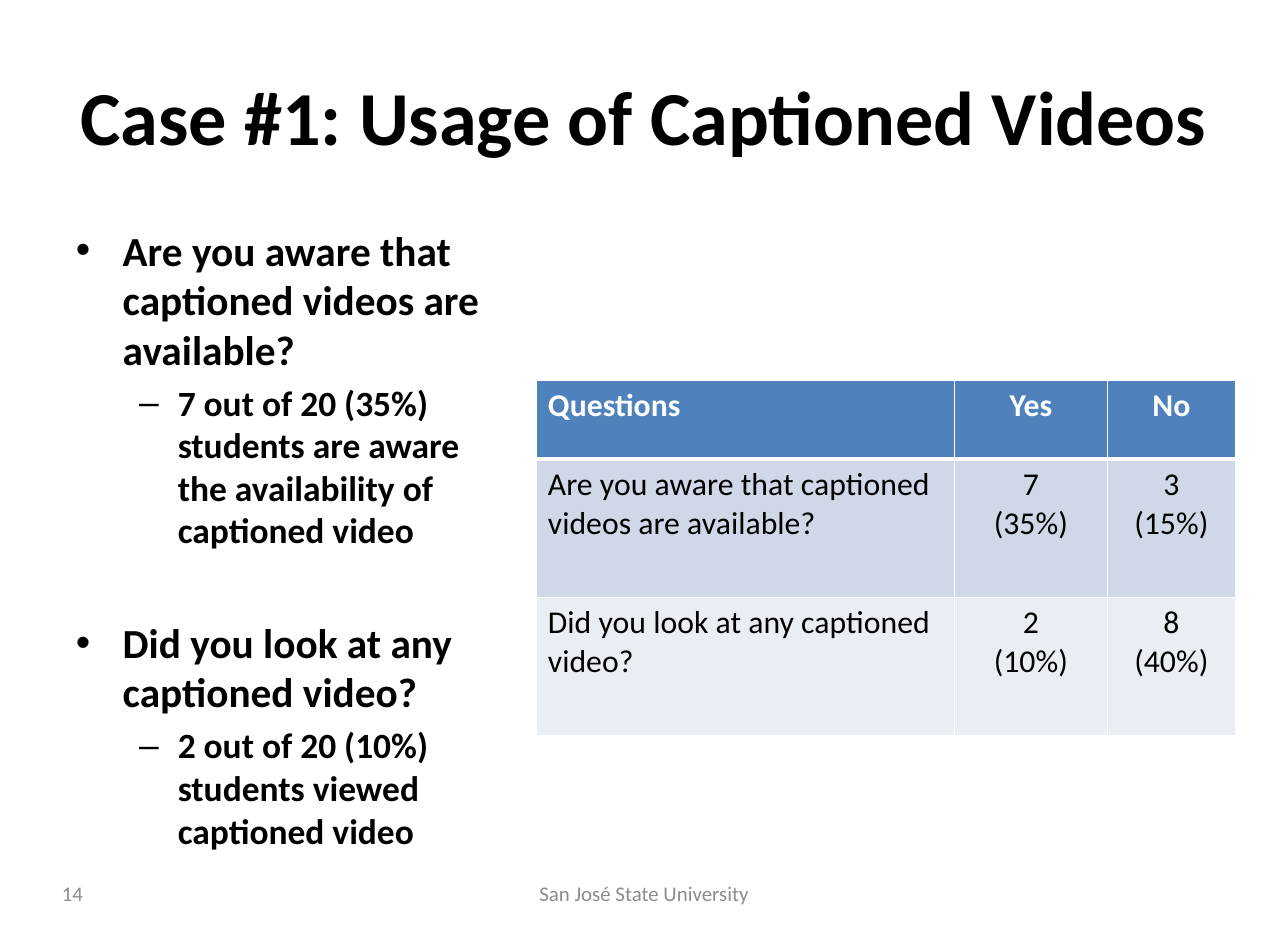
from lxml import etree
from pptx import Presentation
from pptx.dml.color import RGBColor
from pptx.enum.text import MSO_ANCHOR, PP_ALIGN
from pptx.oxml.ns import qn
from pptx.util import Inches, Pt

LEFT, CENTER = PP_ALIGN.LEFT, PP_ALIGN.CENTER
TOP, MIDDLE = MSO_ANCHOR.TOP, MSO_ANCHOR.MIDDLE
BLACK = RGBColor(0x00, 0x00, 0x00)
WHITE = RGBColor(0xFF, 0xFF, 0xFF)
GRAY = RGBColor(0x8C, 0x8C, 0x8C)
BLUE = RGBColor(0x4F, 0x81, 0xBD)
BANDS = [RGBColor(0xD0, 0xD8, 0xE8), RGBColor(0xE9, 0xED, 0xF4)]

# Text, left, top, width, height, alignment, font
HEAD = {"size": Pt(46.9), "bold": True}
FOOT = {"size": Pt(12.8), "color": GRAY}
LABELS = [
    ("Case #1: Usage of Captioned Videos", 0.55, 0.32, 9.9, 1.33, CENTER, HEAD),
    ("San José State University", 3.76, 7.41, 3.48, 0.43, CENTER, FOOT),
    ("14", 0.43, 7.41, 2.57, 0.43, LEFT, FOOT),
]

# Level, space before in points, text
POINTS = [
    (0, 0, "Are you aware that captioned videos are available?"),
    (1, 4.5, "7 out of 20 (35%) students are aware the availability of captioned video"),
    (0, 40.5, "Did you look at any captioned video?"),
    (1, 4.5, "2 out of 20 (10%) students viewed captioned video"),
]
# Bullet, text indent, hanging indent, size
LEVELS = [("•", 0.4, 0.4, 25.4), ("–", 0.87, 0.33, 21.8)]

ROWS = [
    ("Questions", "Yes", "No"),
    ("Are you aware that captioned videos are available?", "7\n(35%)", "3\n(15%)"),
    ("Did you look at any captioned video?", "2\n(10%)", "8\n(40%)"),
]
WIDTHS = [3.57, 1.31, 1.09]
HEIGHTS = [0.67, 1.18, 1.18]


def style(para, color=BLACK, **values):
    para.font.name = "Calibri"
    para.font.color.rgb = color
    for name, value in values.items():
        setattr(para.font, name, value)


def add_box(slide, left, top, width, height, anchor):
    box = slide.shapes.add_textbox(*map(Inches, (left, top, width, height)))
    frame = box.text_frame
    frame.word_wrap = True
    frame.vertical_anchor = anchor
    return frame


def add_points(slide):
    frame = add_box(slide, 0.55, 1.87, 3.66, 5.28, TOP)
    frame.text = "\n".join(text for *_, text in POINTS)
    for para, (level, space, _) in zip(frame.paragraphs, POINTS):
        mark, indent, hang, size = LEVELS[level]
        para.level = level
        para.space_before = Pt(space)
        props = para._p.get_or_add_pPr()
        props.set("marL", str(Inches(indent)))
        props.set("indent", str(-Inches(hang)))
        etree.SubElement(props, qn("a:buFont")).set("typeface", "Arial")
        etree.SubElement(props, qn("a:buChar")).set("char", mark)
        style(para, size=Pt(size), bold=True)


def add_edges(cell, bottom):
    """Draw white cell borders; they must come before the fill."""
    props = cell._tc.get_or_add_tcPr()
    for side, width in (("L", 1), ("R", 1), ("T", 1), ("B", bottom)):
        line = etree.SubElement(props, qn("a:ln" + side), w=str(Pt(width)))
        fill = etree.SubElement(line, qn("a:solidFill"))
        etree.SubElement(fill, qn("a:srgbClr")).set("val", str(WHITE))


def add_grid(slide):
    frame = slide.shapes.add_table(
        len(ROWS), len(WIDTHS), Inches(4.58), Inches(3.25),
        Inches(sum(WIDTHS)), Inches(sum(HEIGHTS)))
    table = frame.table
    for col, width in zip(table.columns, WIDTHS):
        col.width = Inches(width)
    for r, texts in enumerate(ROWS):
        table.rows[r].height = Inches(HEIGHTS[r])
        first = r == 0
        for c, text in enumerate(texts):
            cell = table.cell(r, c)
            cell.text = text
            add_edges(cell, 3 if first else 1)
            cell.fill.solid()
            cell.fill.fore_color.rgb = BLUE if first else BANDS[r - 1]
            for para in cell.text_frame.paragraphs:
                para.alignment = CENTER if c else LEFT
                style(para, WHITE if first else BLACK, size=Pt(19.5), bold=first)


def main():
    deck = Presentation()
    deck.slide_width, deck.slide_height = Inches(11), Inches(8)
    slide = deck.slides.add_slide(deck.slide_layouts[6])
    for text, left, top, width, height, align, font in LABELS:
        frame = add_box(slide, left, top, width, height, MIDDLE)
        frame.text = text
        para = frame.paragraphs[0]
        para.alignment = align
        style(para, **font)
    add_points(slide)
    add_grid(slide)
    deck.save("out.pptx")


if __name__ == "__main__":
    main()
